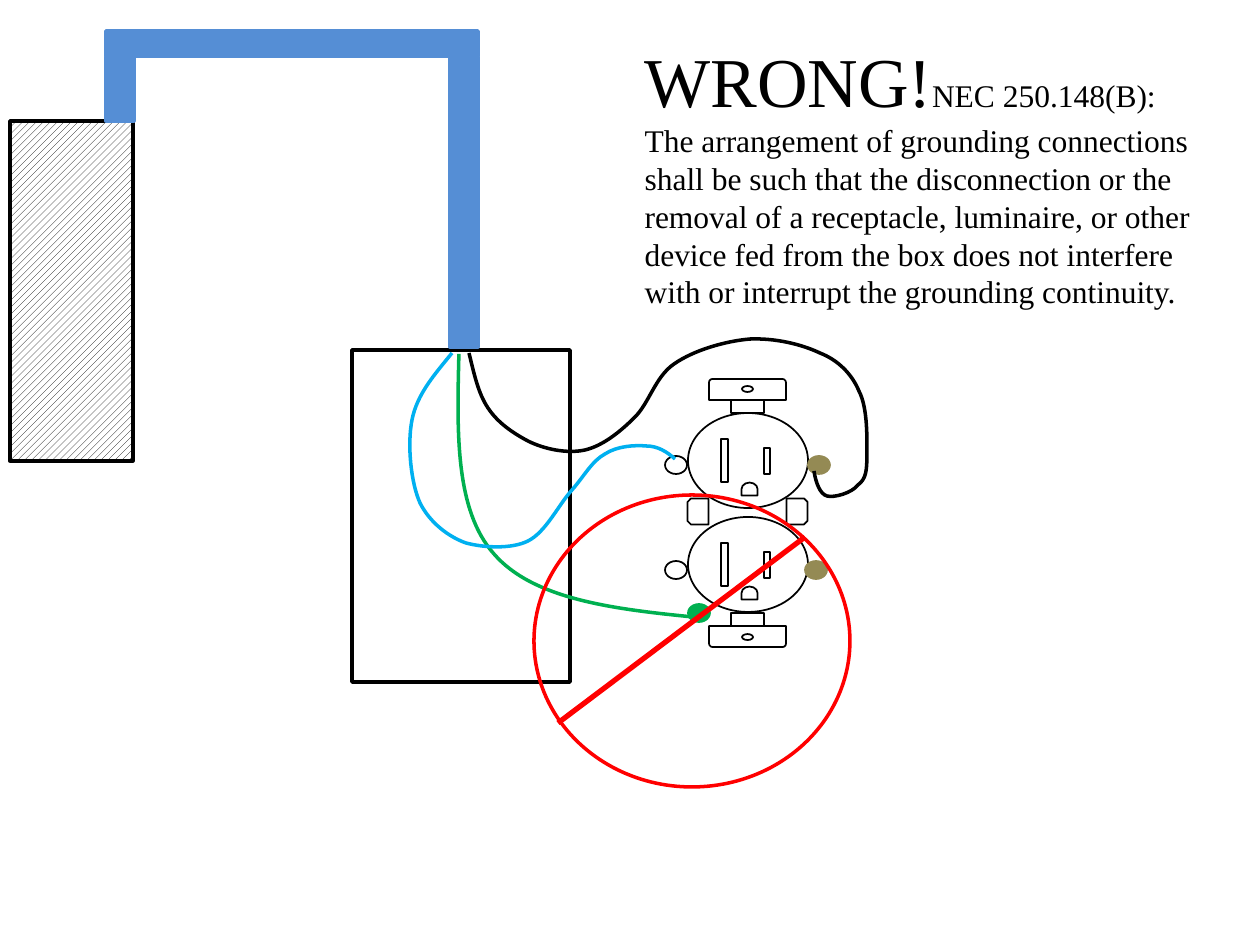
"""Draw a receptacle wiring diagram with a wrongly connected grounding wire."""
from dataclasses import dataclass
from typing import Optional

from lxml import etree
from pptx import Presentation
from pptx.dml.color import RGBColor
from pptx.enum.dml import MSO_PATTERN
from pptx.enum.shapes import MSO_CONNECTOR, MSO_SHAPE
from pptx.enum.text import MSO_ANCHOR, MSO_AUTO_SIZE, PP_ALIGN
from pptx.oxml.ns import qn
from pptx.shapes.shapetree import GroupShapes, SlideShapes
from pptx.text.text import _Paragraph as Paragraph
from pptx.util import Pt

RECT = MSO_SHAPE.RECTANGLE
OVAL = MSO_SHAPE.OVAL
DELAY = MSO_SHAPE.FLOWCHART_DELAY
ROUND_TOP = MSO_SHAPE.ROUND_2_SAME_RECTANGLE
SNIP_TOP = MSO_SHAPE.SNIP_2_SAME_RECTANGLE
HATCH = MSO_PATTERN.WIDE_UPWARD_DIAGONAL
STRAIGHT = MSO_CONNECTOR.STRAIGHT
LEFT = PP_ALIGN.LEFT
TOP = MSO_ANCHOR.TOP
FIT_SHAPE = MSO_AUTO_SIZE.SHAPE_TO_FIT_TEXT

BLACK = RGBColor(0x00, 0x00, 0x00)
WHITE = RGBColor(0xFF, 0xFF, 0xFF)
CONDUIT = RGBColor(0x55, 0x8E, 0xD5)
BRASS = RGBColor(0x94, 0x8A, 0x54)
GREEN = RGBColor(0x00, 0xB0, 0x50)
BLUE = RGBColor(0x00, 0xB0, 0xF0)
RED = RGBColor(0xFF, 0x00, 0x00)

EMU_PER_PX = 914400 / 126
FONT = "Times New Roman"
RULE = (
    "NEC 250.148(B): The arrangement of grounding connections shall be such that "
    "the disconnection or the removal of a receptacle, luminaire, or other device "
    "fed from the box does not interfere with or interrupt the grounding continuity."
)


@dataclass(frozen=True)
class Part:
    """A preset shape, placed in px."""

    kind: MSO_SHAPE
    x: int
    y: int
    w: int
    h: int
    fill: Optional[RGBColor] = None
    line: RGBColor = BLACK
    weight: int = 1
    rotation: int = 0


@dataclass(frozen=True)
class Wire:
    """A start point followed by three Bézier points per segment, in px."""

    color: RGBColor
    points: tuple[tuple[int, int], ...]


OUTLET_TOPS = (517, 413)
OUTLET_PARTS = (
    Part(OVAL, 688, 0, 120, 95),
    Part(RECT, 721, 26, 7, 43),
    Part(RECT, 764, 35, 6, 26),
    Part(DELAY, 743, 68, 13, 16, rotation=270),
)
STRAP_MIRROR = 1026
STRAP_PARTS = (
    Part(ROUND_TOP, 709, 379, 77, 21),
    Part(RECT, 731, 400, 33, 13),
    Part(OVAL, 742, 386, 11, 6),
)
SCREWS = (
    (805, 561, BRASS),
    (808, 456, BRASS),
    (665, 456, None),
    (688, 604, GREEN),
    (665, 561, None),
)
TABS = ((784, 90), (685, 270))
CONDUIT_RUNS = ((450, 57, 28, 290), (106, 31, 372, 25), (106, 57, 28, 64))

GROUND = Wire(GREEN, (
    (459, 354), (457, 432), (455, 510), (494, 554),
    (533, 599), (612, 609), (693, 617),
))
NEUTRAL = Wire(BLUE, (
    (452, 353), (435, 374), (417, 394), (412, 420),
    (407, 445), (411, 483), (420, 503), (430, 523), (449, 537), (466, 543),
    (485, 548), (512, 549), (528, 541), (546, 532), (559, 504), (572, 490),
    (585, 475), (592, 461), (605, 454), (617, 446), (635, 445), (646, 446),
    (658, 446), (667, 452), (675, 459),
))
HOT = Wire(BLACK, (
    (469, 353), (474, 373), (478, 393), (488, 408),
    (498, 423), (513, 433), (528, 441), (544, 449), (567, 454), (585, 450),
    (602, 446), (619, 433), (634, 418), (649, 404), (655, 377), (674, 364),
    (694, 350), (726, 341), (750, 339), (775, 338), (801, 344), (820, 353),
    (838, 360), (852, 374), (859, 391), (868, 408), (867, 440), (867, 455),
    (867, 471), (866, 479), (858, 485), (852, 493), (834, 498), (827, 496),
    (820, 494), (816, 483), (814, 471),
))


def px(*lengths: int) -> list[int]:
    return [round(length * EMU_PER_PX) for length in lengths]


def add_part(shapes: GroupShapes | SlideShapes, part: Part):
    sp = shapes.add_shape(part.kind, *px(part.x, part.y, part.w, part.h))
    sp.shadow.inherit = False
    sp.rotation = part.rotation
    if part.fill is None:
        sp.fill.background()
    else:
        sp.fill.solid()
        sp.fill.fore_color.rgb = part.fill
    sp.line.color.rgb = part.line
    sp.line.width = Pt(part.weight)
    return sp


def add_wire(shapes: SlideShapes, wire: Wire) -> None:
    builder = shapes.build_freeform(*wire.points[0], scale=EMU_PER_PX)
    builder.add_line_segments(wire.points[1:], close=False)
    sp = builder.convert_to_shape()
    sp.shadow.inherit = False
    sp.fill.background()
    sp.line.color.rgb = wire.color
    sp.line.width = Pt(2)
    steps = list(sp.element.iter(qn("a:lnTo")))
    for first, second, third in zip(steps[::3], steps[1::3], steps[2::3]):
        curve = etree.Element(qn("a:cubicBezTo"))
        first.addprevious(curve)
        for step in (first, second, third):
            curve.append(step[0])
            step.getparent().remove(step)


def add_run(p: Paragraph, text: str, *, size: int, color: RGBColor = BLACK) -> None:
    r = p.add_run()
    r.text = text
    r.font.name = FONT
    r.font.size = Pt(size)
    r.font.color.rgb = color


def add_title(shapes: SlideShapes) -> None:
    title = shapes.title
    title.left, title.top, title.width, title.height = px(632, 31, 586, 289)
    tf = title.text_frame
    tf.word_wrap = True
    tf.auto_size = FIT_SHAPE
    tf.vertical_anchor = TOP
    p = tf.paragraphs[0]
    p.alignment = LEFT
    add_run(p, "WRONG!", size=40)
    add_run(p, RULE, size=18)


def add_receptacle(shapes: GroupShapes) -> None:
    for top in OUTLET_TOPS:
        for part in OUTLET_PARTS:
            add_part(shapes, Part(part.kind, part.x, top + part.y, part.w, part.h,
                                  rotation=part.rotation))
    for part in STRAP_PARTS:
        add_part(shapes, part)
        add_part(shapes, Part(part.kind, part.x, STRAP_MIRROR - part.y - part.h,
                              part.w, part.h, rotation=180))
    for x, y, color in SCREWS:
        add_part(shapes, Part(OVAL, x, y, 22, 18, color, color or BLACK))
    for x, rotation in TABS:
        add_part(shapes, Part(SNIP_TOP, x, 501, 26, 21, rotation=rotation))


def add_prohibition(shapes: GroupShapes) -> None:
    add_part(shapes, Part(OVAL, 534, 495, 316, 292, line=RED, weight=2))
    slash = shapes.add_connector(STRAIGHT, *px(805, 537, 558, 723))
    slash.line.color.rgb = RED
    slash.line.width = Pt(3)
    etree.SubElement(slash.element.spPr, qn("a:effectLst"))


def main() -> None:
    prs = Presentation()
    prs.slide_width, prs.slide_height = px(1260, 945)
    s = prs.slides.add_slide(prs.slide_layouts[5])
    add_title(s.shapes)
    add_part(s.shapes, Part(RECT, 352, 350, 218, 332, weight=2))
    add_receptacle(s.shapes.add_group_shape().shapes)
    panel = add_part(s.shapes, Part(RECT, 10, 121, 123, 340, weight=2))
    panel.fill.patterned()
    panel.fill.pattern = HATCH
    panel.fill.fore_color.rgb = BLACK
    panel.fill.back_color.rgb = WHITE
    for run in CONDUIT_RUNS:
        add_part(s.shapes, Part(RECT, *run, fill=CONDUIT, line=CONDUIT, weight=2))
    add_wire(s.shapes, GROUND)
    add_prohibition(s.shapes.add_group_shape().shapes)
    for wire in (NEUTRAL, HOT):
        add_wire(s.shapes, wire)
    prs.save("out.pptx")


if __name__ == "__main__":
    main()
